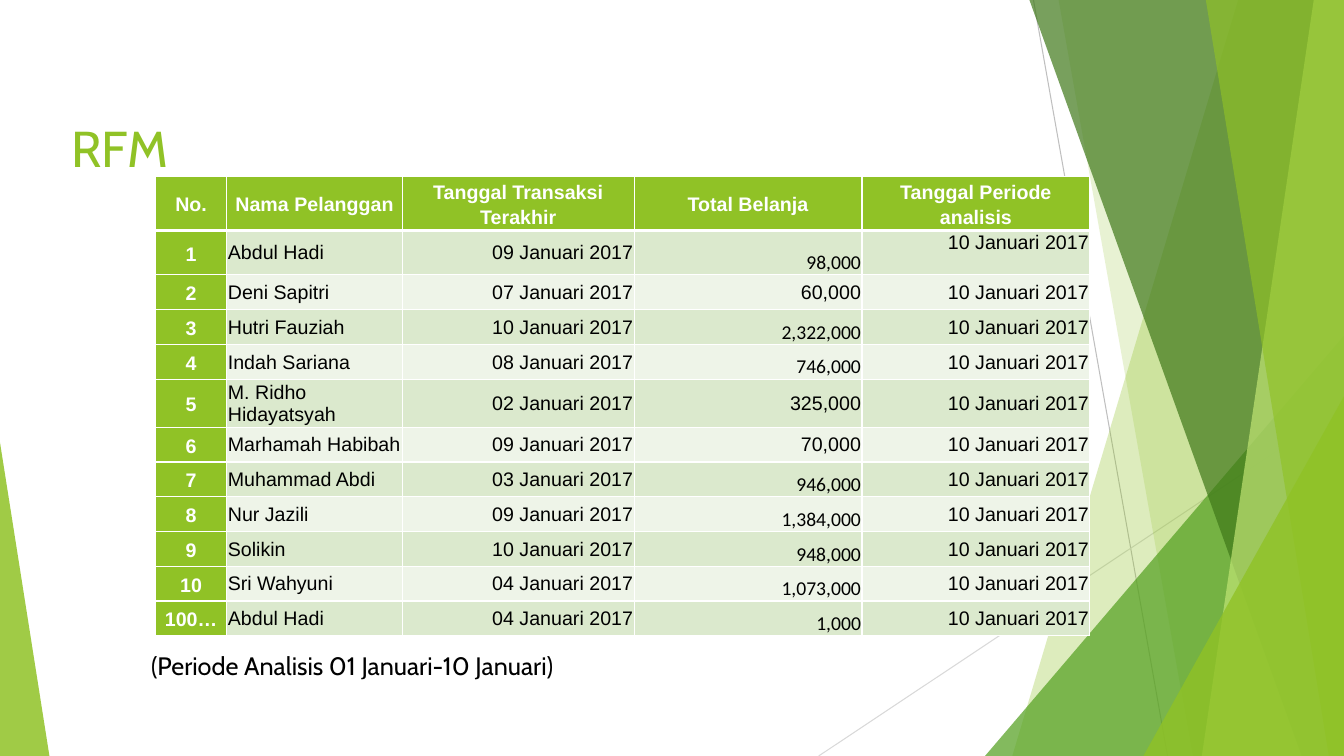
from dataclasses import dataclass

from lxml.etree import SubElement
from pptx import Presentation
from pptx.dml.color import RGBColor
from pptx.enum.shapes import MSO_CONNECTOR, MSO_SHAPE
from pptx.enum.text import MSO_ANCHOR, PP_ALIGN
from pptx.oxml.ns import qn
from pptx.util import Inches, Pt


@dataclass(frozen=True)
class Theme:
    lime: str = "90C226"
    leaf: str = "54A021"
    moss: str = "3F7819"
    pale: str = "C0E474"
    odd: str = "DBE9CD"
    even: str = "EEF4E8"
    white: str = "FFFFFF"
    black: str = "000000"
    gray: str = "BFBFBF"
    mist: str = "D9D9D9"
    head: str = "Cabin"
    body: str = "Arial"
    sums: str = "Calibri"
    title: int = 36
    note: int = 18
    cell: int = 14


THEME = Theme()
WIDE, HIGH = 13.33, 7.5
PERIOD = "10 Januari 2017"
HEADS = ["No.", "Nama Pelanggan", "Tanggal Transaksi Terakhir",
         "Total Belanja", "Tanggal Periode analisis"]
ROWS = [
    ("1", "Abdul Hadi", "09 Januari 2017", "98,000"),
    ("2", "Deni Sapitri", "07 Januari 2017", "60,000"),
    ("3", "Hutri Fauziah", "10 Januari 2017", "2,322,000"),
    ("4", "Indah Sariana", "08 Januari 2017", "746,000"),
    ("5", "M. Ridho Hidayatsyah", "02 Januari 2017", "325,000"),
    ("6", "Marhamah Habibah", "09 Januari 2017", "70,000"),
    ("7", "Muhammad Abdi", "03 Januari 2017", "946,000"),
    ("8", "Nur Jazili", "09 Januari 2017", "1,384,000"),
    ("9", "Solikin", "10 Januari 2017", "948,000"),
    ("10", "Sri Wahyuni", "04 Januari 2017", "1,073,000"),
    ("100…", "Abdul Hadi", "04 Januari 2017", "1,000"),
]
PLAIN_SUMS = {"60,000", "325,000", "70,000"}


def paint(shape, color, alpha):
    shape.shadow.inherit = False
    shape.line.fill.background()
    shape.fill.solid()
    shape.fill.fore_color.rgb = RGBColor.from_string(color)
    tint = shape.fill._xPr.find(qn("a:solidFill"))[0]
    SubElement(tint, qn("a:alpha"), val=str(alpha * 1000))


def write(para, text, font, size, color, bold=False):
    run = para.add_run()
    run.text = text
    run.font.name = font
    run.font.size = Pt(size)
    run.font.bold = bold
    run.font.color.rgb = RGBColor.from_string(color)


def add_backdrop(slide, box):
    left, top, width, height = box
    right, base = left + width, top + height

    def thread(start, end, color):
        line = slide.shapes.add_connector(
            MSO_CONNECTOR.STRAIGHT,
            Inches(left + start[0]), Inches(top + start[1]),
            Inches(left + end[0]), Inches(top + end[1]))
        line.line.width = Pt(0.75)
        line.line.color.rgb = RGBColor.from_string(color)
        SubElement(line._element.spPr, qn("a:effectLst"))

    def blade(upper, lower, color, alpha):
        form = slide.shapes.build_freeform(
            Inches(left + upper), Inches(top), scale=1.0)
        corners = [(right, top), (right, base), (left + lower, base)]
        form.add_line_segments(
            [(Inches(x), Inches(y)) for x, y in corners], close=True)
        paint(form.convert_to_shape(), color, alpha)

    def wedge(x, wide, high, tip, color, alpha):
        shape = slide.shapes.add_shape(
            MSO_SHAPE.ISOSCELES_TRIANGLE, Inches(x), Inches(base - high),
            Inches(wide), Inches(high))
        shape.adjustments[0] = tip
        paint(shape, color, alpha)

    thread((10.25, 0), (11.58, height), THEME.gray)
    thread((width, 4.03), (8.12, height), THEME.mist)
    blade(12.28, 10.04, THEME.lime, 30)
    blade(10.5, 11.83, THEME.lime, 20)
    wedge(right - 3.56, 3.56, 4.17, 1, THEME.leaf, 72)
    blade(10.21, 12.91, THEME.moss, 70)
    blade(13.03, 11.92, THEME.pale, 70)
    blade(11.96, 13.18, THEME.lime, 65)
    wedge(right - 1.99, 1.99, 3.57, 1, THEME.lime, 80)
    wedge(left, 0.49, 3.11, 0, THEME.lime, 85)


def add_label(slide, box, text, size, color):
    frame = slide.shapes.add_textbox(*map(Inches, box)).text_frame
    frame.word_wrap = True
    write(frame.paragraphs[0], text, THEME.head, size, color)


def add_edges(cell, upper, lower):
    props = cell._tc.get_or_add_tcPr()
    for side, width in (("L", 1), ("R", 1), ("T", upper), ("B", lower)):
        edge = SubElement(props, qn(f"a:ln{side}"), w=str(Pt(width)))
        fill = SubElement(edge, qn("a:solidFill"))
        SubElement(fill, qn("a:srgbClr"), val=THEME.white)


def fill_cell(cell, text, row, col):
    label = row == 0 or col == 0
    add_edges(cell, 3 if row == 1 else 1, 3 if row == 0 else 1)
    band = THEME.odd if row % 2 else THEME.even
    cell.fill.solid()
    cell.fill.fore_color.rgb = RGBColor.from_string(
        THEME.lime if label else band)
    cell.margin_left = cell.margin_right = Inches(0.07 if label else 0.01)
    cell.margin_top = Inches(0 if label else 0.01)
    cell.margin_bottom = 0
    cell.vertical_anchor = MSO_ANCHOR.MIDDLE
    para = cell.text_frame.paragraphs[0]
    font = THEME.body
    if label:
        para.alignment = PP_ALIGN.CENTER
        para.line_spacing = 1.15
    elif col > 1:
        para.alignment = PP_ALIGN.RIGHT
    if not label and col == 3 and text not in PLAIN_SUMS:
        font = THEME.sums
        cell.vertical_anchor = MSO_ANCHOR.BOTTOM
    if (row, col) == (1, 4):
        cell.vertical_anchor = MSO_ANCHOR.TOP
    color = THEME.white if label else THEME.black
    write(para, text, font, THEME.cell, color, label)


def add_sales(slide, box):
    lines = [HEADS] + [(*row, PERIOD) for row in ROWS]
    table = slide.shapes.add_table(
        len(lines), len(HEADS), *map(Inches, box)).table
    for col, width in zip(table.columns, (0.71, 1.74, 2.3, 2.26, 2.26)):
        col.width = Inches(width)
    table.rows[1].height = Inches(0.44)
    for row, line in enumerate(lines):
        for col, text in enumerate(line):
            fill_cell(table.cell(row, col), text, row, col)


def main():
    deck = Presentation()
    deck.slide_width, deck.slide_height = Inches(WIDE), Inches(HIGH)
    slide = deck.slides.add_slide(deck.slide_layouts[6])
    add_backdrop(slide, (0, 0, WIDE, HIGH))
    add_label(slide, (0.61, 1.11, 4.66, 1.44), "RFM",
              THEME.title, THEME.lime)
    add_sales(slide, (1.54, 1.75, 9.26, 4.14))
    add_label(slide, (1.4, 6.4, 4.66, 0.4),
              "(Periode Analisis 01 Januari-10 Januari)",
              THEME.note, THEME.black)
    deck.save("out.pptx")


if __name__ == "__main__":
    main()
